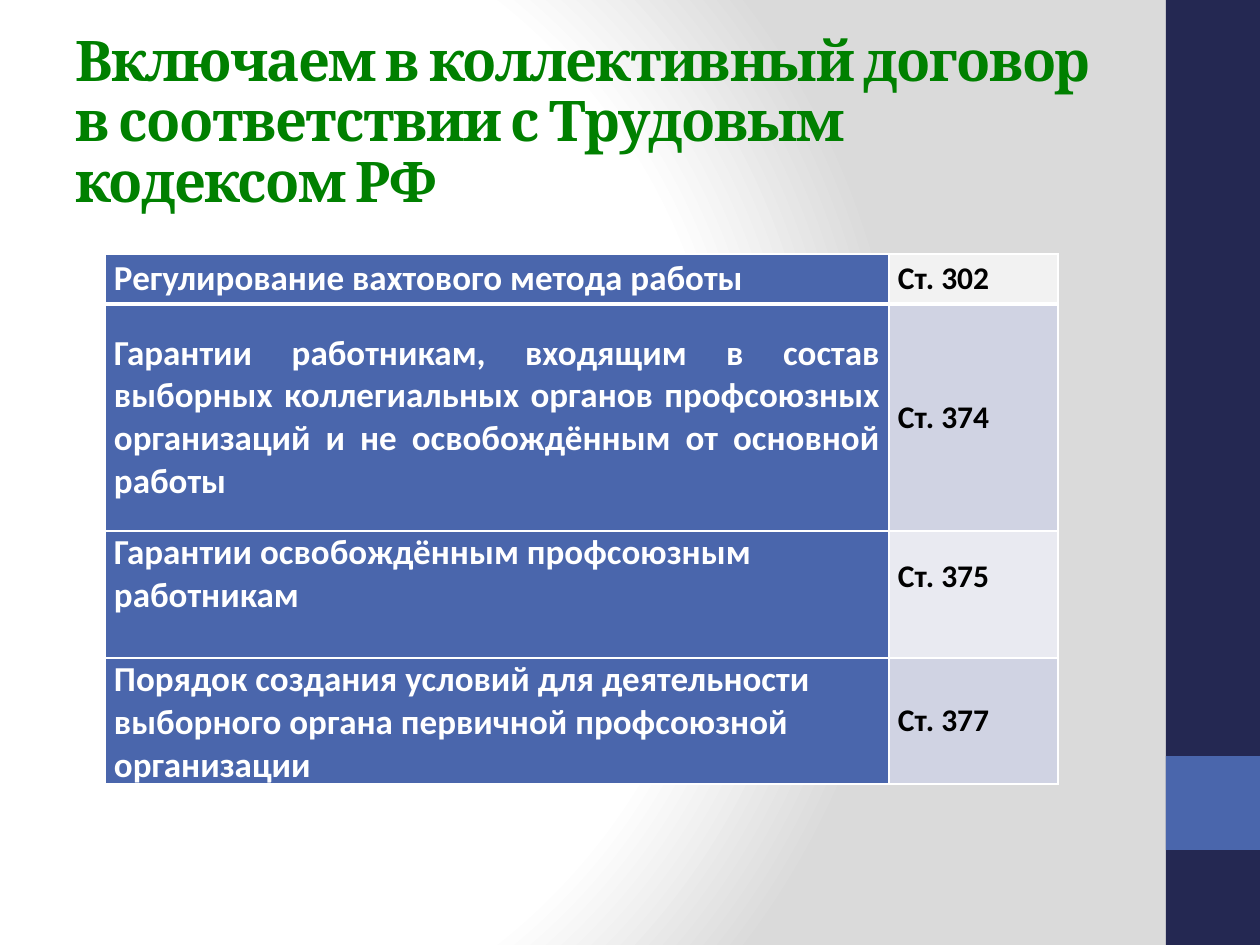
from pptx import Presentation
from pptx.dml.color import RGBColor
from pptx.enum.shapes import MSO_SHAPE
from pptx.enum.text import MSO_ANCHOR, PP_ALIGN
from pptx.oxml import parse_xml
from pptx.oxml.ns import nsdecls
from pptx.util import Pt

PX = 914400 // 126
NAVY = RGBColor(0x24, 0x28, 0x52)
BLUE = RGBColor(0x4A, 0x66, 0xAC)
GREEN = RGBColor(0x00, 0x80, 0x00)
WHITE = RGBColor(0xFF, 0xFF, 0xFF)
BLACK = RGBColor(0x00, 0x00, 0x00)
PALE = RGBColor(0xF2, 0xF2, 0xF2)
DARK = RGBColor(0xD0, 0xD3, 0xE3)
LIGHT = RGBColor(0xE9, 0xEA, 0xF1)

TITLE = "Включаем в коллективный договор в соответствии с Трудовым кодексом РФ"
# Topic, article, article fill, row height, bottom insets of both cells
ROWS = [
    ("Регулирование вахтового метода работы", "Ст. 302", PALE, 50, (0, 0)),
    ("Гарантии работникам, входящим в состав выборных коллегиальных органов "
     "профсоюзных организаций и не освобождённым от основной работы",
     "Ст. 374", DARK, 227, (0, 0)),
    ("Гарантии освобождённым профсоюзным работникам",
     "Ст. 375", LIGHT, 125, (43, 36)),
    ("Порядок создания условий для деятельности выборного органа первичной "
     "профсоюзной организации", "Ст. 377", DARK, 125, (0, 0)),
]
COLS = [784, 169]
BANDS = [(0, 945, NAVY), (756, 94, BLUE)]
STOPS = [(0, WHITE), (75, WHITE), (100, RGBColor(0xDA, 0xDA, 0xDA))]


def style(run, name, size, color):
    run.font.color.rgb = color
    for key, val in {"name": name, "size": Pt(size), "bold": True}.items():
        setattr(run.font, key, val)


def border(cell, side, width):
    cell._tc.get_or_add_tcPr().append(parse_xml(
        f'<a:{side} {nsdecls("a")} w="{Pt(width)}"><a:solidFill>'
        f'<a:srgbClr val="{WHITE}"/></a:solidFill></a:{side}>'))


prs = Presentation()
prs.slide_width, prs.slide_height = 1260 * PX, 945 * PX
slide = prs.slides.add_slide(prs.slide_layouts[6])

# Background: radial gradient
stops = "".join(f'<a:gs pos="{pos * 1000}"><a:srgbClr val="{rgb}"/></a:gs>'
                for pos, rgb in STOPS)
slide.element.cSld.insert(0, parse_xml(
    f'<p:bg {nsdecls("p", "a")}><p:bgPr><a:gradFill rotWithShape="1">'
    f'<a:gsLst>{stops}</a:gsLst><a:path path="circle">'
    '<a:fillToRect l="20000" t="50000" r="100000" b="50000"/></a:path>'
    '</a:gradFill><a:effectLst/></p:bgPr></p:bg>'))

# Right-hand bands
for top, high, fill in BANDS:
    band = slide.shapes.add_shape(MSO_SHAPE.RECTANGLE, 1166 * PX, top * PX,
                                  94 * PX, high * PX)
    band.shadow.inherit = False
    band.fill.solid()
    band.fill.fore_color.rgb = fill
    band.line.fill.background()

# Title
box = slide.shapes.add_textbox(63 * PX, 38 * PX, 1050 * PX, 195 * PX)
frame = box.text_frame
for key, val in {"word_wrap": True, "vertical_anchor": MSO_ANCHOR.MIDDLE,
                 "margin_bottom": 30 * PX}.items():
    setattr(frame, key, val)
para = frame.paragraphs[0]
para.line_spacing = 0.9
run = para.add_run()
run.text = TITLE
style(run, "Cambria", 32, GREEN)
run.font._element.set("spc", "-100")

# Table of articles
total = sum(row[3] for row in ROWS)
table = slide.shapes.add_table(len(ROWS), len(COLS), 105 * PX, 254 * PX,
                               sum(COLS) * PX, total * PX).table
for col, wide in zip(table.columns, COLS):
    col.width = wide * PX
for i, (topic, art, tint, high, gaps) in enumerate(ROWS):
    table.rows[i].height = high * PX
    looks = [(topic, 20, WHITE, BLUE), (art, 18, BLACK, tint)]
    for j, (text, size, color, fill) in enumerate(looks):
        cell = table.cell(i, j)
        for key, val in {"vertical_anchor": MSO_ANCHOR.MIDDLE,
                         "margin_left": 9 * PX, "margin_right": 9 * PX,
                         "margin_top": 0,
                         "margin_bottom": gaps[j] * PX}.items():
            setattr(cell, key, val)
        para = cell.text_frame.paragraphs[0]
        if (i, j) == (1, 0):
            para.alignment = PP_ALIGN.JUSTIFY
        run = para.add_run()
        run.text = text
        style(run, "Calibri", size, color)
        # Borders come before the fill in the cell properties
        for side in ("lnL", "lnR", "lnT", "lnB"):
            thick = (side, i) in (("lnB", 0), ("lnT", 1))
            border(cell, side, 3 if thick else 1)
        cell.fill.solid()
        cell.fill.fore_color.rgb = fill

prs.save("out.pptx")
